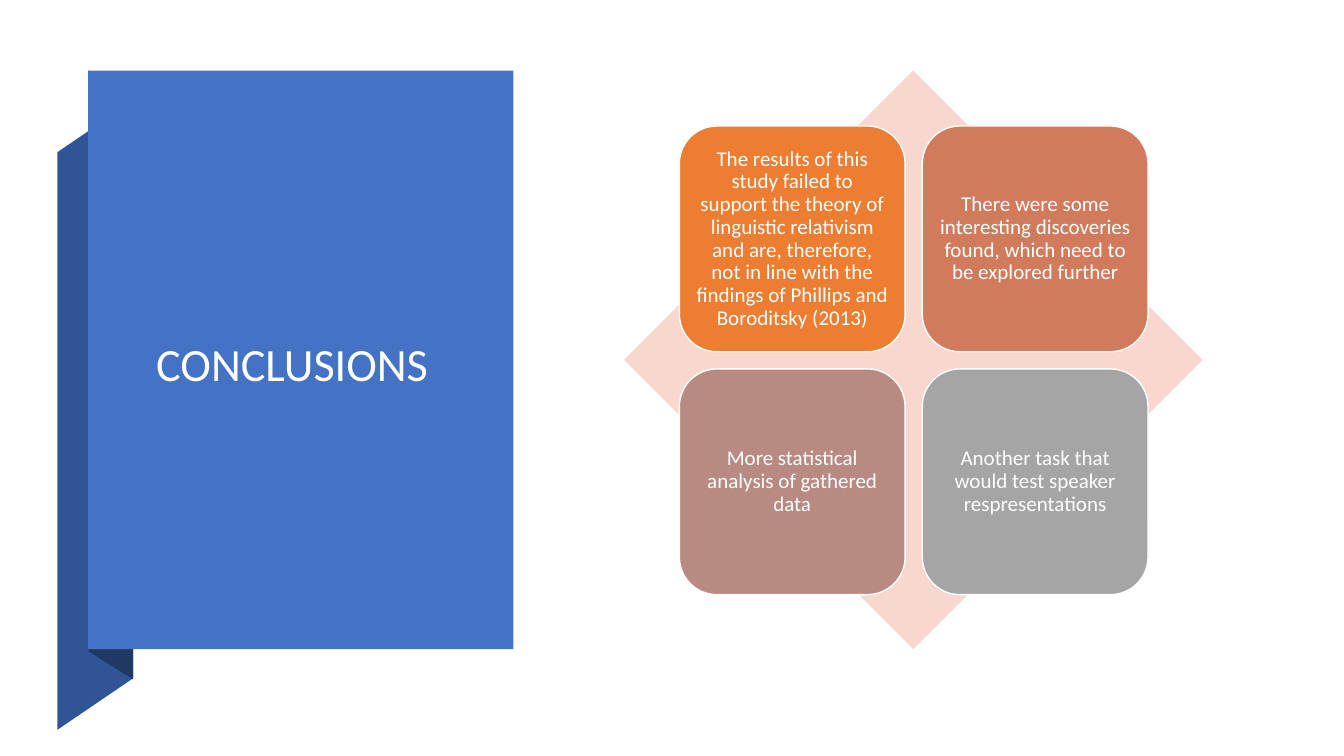
from dataclasses import dataclass

from pptx import Presentation
from pptx.dml.color import RGBColor
from pptx.enum.shapes import MSO_SHAPE as Preset
from pptx.enum.text import MSO_ANCHOR as Anchor, PP_ALIGN as Align
from pptx.shapes.autoshape import Shape
from pptx.slide import Slide
from pptx.text.text import TextFrame
from pptx.util import Emu, Inches, Pt

WIDTH, HEIGHT = Inches(13.33), Inches(7.5)
COLUMNS, ROWS = 40, 22.5
FONT = "Calibri"
WHITE = "FFFFFF"
TOP, DIAMOND_LEFT, DIAMOND_SIZE = 2.1, 18.57, 17.22
CARD_LEFT, CARD_TOP, CARD_SIZE, CARD_PITCH = 20.22, 3.75, 6.72, 7.23


@dataclass(frozen=True)
class Box:
    """A rectangle in grid columns and rows."""
    left: float
    top: float
    width: float
    height: float


@dataclass(frozen=True)
class Fold:
    """A flat side of the folded ribbon."""
    corners: tuple[tuple[float, float], ...]
    color: str


@dataclass(frozen=True)
class Card:
    """A conclusion and its card colour."""
    text: str
    color: str


FOLDS = (
    Fold(((1.71, 21.72), (3.96, 20.19), (3.96, 3), (1.71, 4.53)), "2F5597"),
    Fold(((2.63, 19.38), (3.96, 20.22), (3.96, 2.97), (2.63, TOP)), "203864"),
)
CARDS = (
    Card("The results of this study failed to support the theory of linguistic "
         "relativism and are, therefore, not in line with the findings of "
         "Phillips and Boroditsky (2013)", "ED7D31"),
    Card("There were some interesting discoveries found, which need to be "
         "explored further", "D17B5C"),
    Card("More statistical analysis of gathered data", "B98A82"),
    Card("Another task that would test speaker respresentations", "A5A5A5"),
)


def across(columns: float) -> Emu:
    """Convert grid columns to a length."""
    return Emu(round(WIDTH * columns / COLUMNS))


def down(rows: float) -> Emu:
    """Convert grid rows to a length."""
    return Emu(round(HEIGHT * rows / ROWS))


def place(box: Box) -> tuple[Emu, Emu, Emu, Emu]:
    """Convert a box to left, top, width and height."""
    return across(box.left), down(box.top), across(box.width), down(box.height)


def rgb(color: str) -> RGBColor:
    """Convert a hex string to a colour."""
    return RGBColor.from_string(color)


def paint(shape: Shape, color: str) -> None:
    """Give a shape a flat fill without outline or shadow."""
    shape.shadow.inherit = False
    shape.fill.solid()
    shape.fill.fore_color.rgb = rgb(color)
    shape.line.fill.background()


def write(frame: TextFrame, text: str, size: float, align: Align) -> None:
    """Write one white, vertically centred paragraph."""
    frame.text = text
    frame.word_wrap = True
    frame.vertical_anchor = Anchor.MIDDLE
    paragraph = frame.paragraphs[0]
    paragraph.alignment = align
    paragraph.line_spacing = 0.9
    font = paragraph.runs[0].font
    font.name, font.size, font.color.rgb = FONT, Pt(size), rgb(WHITE)


def draw_fold(slide: Slide, fold: Fold) -> None:
    """Draw one side of the ribbon."""
    start, *rest = [(across(x), down(y)) for x, y in fold.corners]
    outline = slide.shapes.build_freeform(*start)
    outline.add_line_segments(rest, close=True)
    paint(outline.convert_to_shape(), fold.color)


def draw_preset(slide: Slide, preset: Preset, box: Box, color: str) -> Shape:
    """Draw a flat preset shape."""
    shape = slide.shapes.add_shape(preset, *place(box))
    paint(shape, color)
    return shape


def draw_card(slide: Slide, card: Card, index: int) -> None:
    """Draw one card of the two-by-two matrix."""
    row, column = divmod(index, 2)
    box = Box(CARD_LEFT + column * CARD_PITCH, CARD_TOP + row * CARD_PITCH,
              CARD_SIZE, CARD_SIZE)
    shape = draw_preset(slide, Preset.ROUNDED_RECTANGLE, box, card.color)
    shape.line.color.rgb = rgb(WHITE)
    shape.line.width = Pt(1)
    frame = shape.text_frame
    frame.margin_left = frame.margin_right = Inches(0.06)
    frame.margin_top = frame.margin_bottom = Inches(0.06)
    write(frame, card.text, 15, Align.CENTER)


def draw_title(slide: Slide) -> None:
    """Set the title on top of its panel."""
    title = slide.shapes.title
    title.left, title.top, title.width, title.height = place(
        Box(4.35, 5.01, 9.03, 11.82))
    write(title.text_frame, "CONCLUSIONS", 33, Align.LEFT)
    title.element.getparent().append(title.element)


def main() -> None:
    """Build and save the slide."""
    deck = Presentation()
    deck.slide_width, deck.slide_height = WIDTH, HEIGHT
    slide = deck.slides.add_slide(deck.slide_layouts.get_by_name("Title Only"))
    for fold in FOLDS:
        draw_fold(slide, fold)
    draw_preset(slide, Preset.RECTANGLE, Box(2.62, TOP, 12.66, 17.22), "4472C4")
    draw_title(slide)
    draw_preset(slide, Preset.DIAMOND,
                Box(DIAMOND_LEFT, TOP, DIAMOND_SIZE, DIAMOND_SIZE), "F8D7CE")
    for index, card in enumerate(CARDS):
        draw_card(slide, card, index)
    deck.save("out.pptx")


if __name__ == "__main__":
    main()
